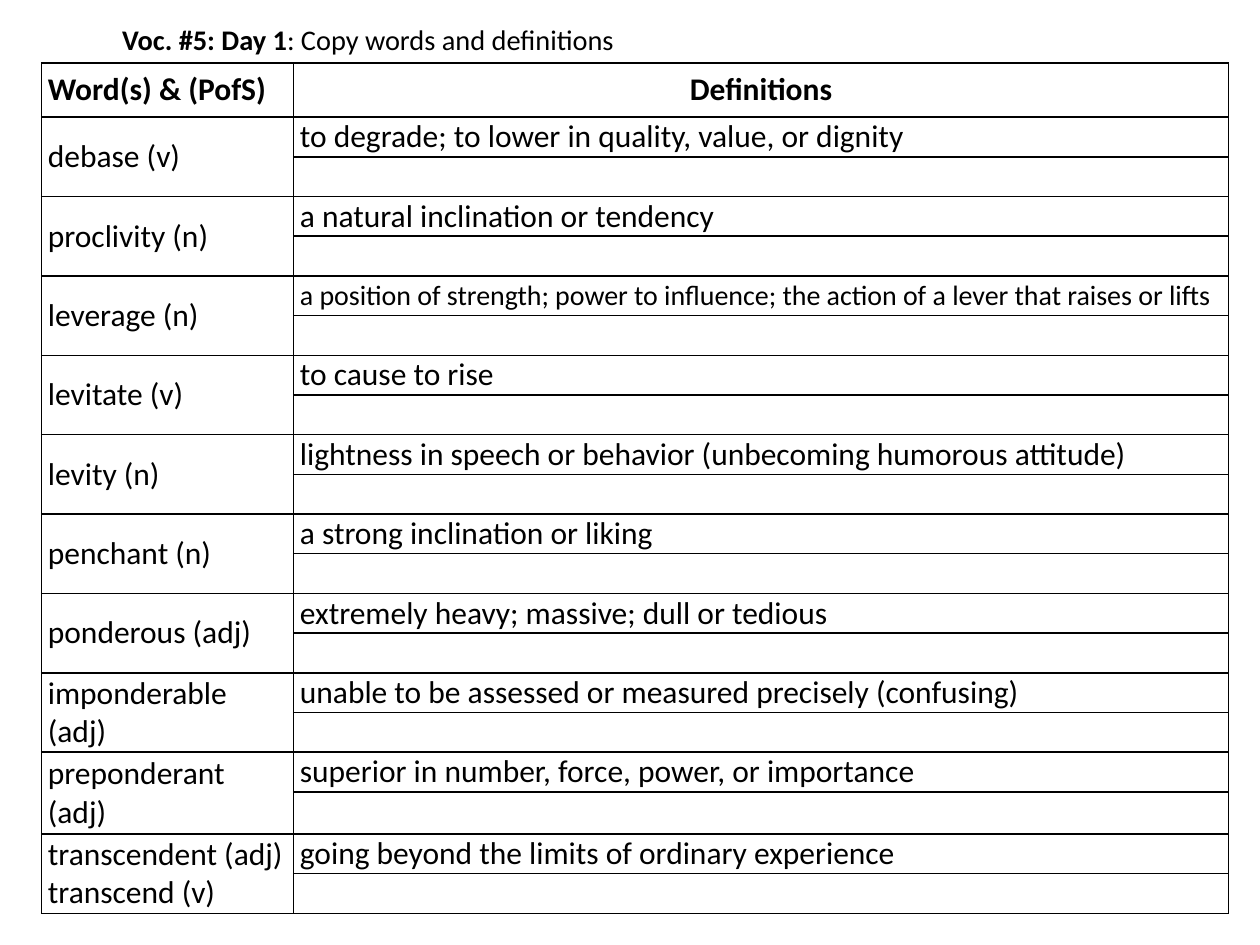
"""Build a vocabulary slide with a table of words and definitions."""
from dataclasses import dataclass

from pptx import Presentation
from pptx.dml.color import RGBColor
from pptx.enum.text import MSO_ANCHOR, PP_ALIGN
from pptx.oxml import parse_xml
from pptx.oxml.ns import nsdecls
from pptx.util import Inches, Pt


@dataclass(frozen=True)
class Theme:
    """Colours, font and type sizes."""
    font: str = "Calibri"
    ink: str = "000000"
    paper: str = "FFFFFF"
    title: float = 16.2
    body: float = 18
    small: float = 16
    border: float = 1


@dataclass(frozen=True)
class Entry:
    """A word, its definition and the look of its two rows."""
    word: str
    definition: str
    size: float = Theme.body
    extra: float = 0


THEME = Theme()
HEADER_H = Inches(0.43)
ENTRY_H = Inches(0.63)
COLUMNS = (Inches(2), Inches(7.42))
ENTRIES = (
    Entry("debase (v)", "to degrade; to lower in quality, value, or dignity"),
    Entry("proclivity (n)", "a natural inclination or tendency"),
    Entry("leverage (n)",
          "a position of strength; power to influence; the action of a lever that raises or lifts",
          size=THEME.small),
    Entry("levitate (v)", "to cause to rise"),
    Entry("levity (n)", "lightness in speech or behavior (unbecoming humorous attitude)"),
    Entry("penchant (n)", "a strong inclination or liking"),
    Entry("ponderous (adj)", "extremely heavy; massive; dull or tedious"),
    Entry("imponderable (adj)", "unable to be assessed or measured precisely (confusing)"),
    Entry("preponderant (adj)", "superior in number, force, power, or importance", extra=0.02),
    Entry("transcendent (adj)\ntranscend (v)", "going beyond the limits of ordinary experience"),
)


def style_paragraph(p, size: float, bold: bool = False, align=PP_ALIGN.LEFT) -> None:
    """Set the font and alignment of a paragraph."""
    p.alignment = align
    p.font.name = THEME.font
    p.font.size = Pt(size)
    p.font.bold = bold
    p.font.color.rgb = RGBColor.from_string(THEME.ink)


def style_cell(cell) -> None:
    """Give a cell its margins, borders and fill."""
    cell.margin_left = cell.margin_right = Inches(0.05)
    cell.margin_top = cell.margin_bottom = 0
    cell.vertical_anchor = MSO_ANCHOR.MIDDLE
    tc_pr = cell._tc.get_or_add_tcPr()
    for side in ("lnL", "lnR", "lnT", "lnB"):
        tc_pr.append(parse_xml(
            f'<a:{side} {nsdecls("a")} w="{Pt(THEME.border)}"><a:solidFill>'
            f'<a:srgbClr val="{THEME.ink}"/></a:solidFill></a:{side}>'))
    cell.fill.solid()
    cell.fill.fore_color.rgb = RGBColor.from_string(THEME.paper)


def write_cell(cell, text: str, size: float = THEME.body, bold: bool = False,
               align=PP_ALIGN.LEFT) -> None:
    """Write styled text into a cell."""
    cell.text = text
    for p in cell.text_frame.paragraphs:
        style_paragraph(p, size, bold, align)


def add_title(s) -> None:
    """Add the heading with its bold lead."""
    sp = s.shapes.add_textbox(Inches(0.67), 0, Inches(4.5), Inches(0.62))
    tf = sp.text_frame
    tf.word_wrap = True
    tf.vertical_anchor = MSO_ANCHOR.MIDDLE
    p = tf.paragraphs[0]
    style_paragraph(p, THEME.title, align=PP_ALIGN.CENTER)
    r = p.add_run()
    r.text = "Voc. #5: Day 1"
    r.font.bold = True
    p.add_run().text = ": Copy words and definitions"


def add_vocabulary(s) -> None:
    """Add the table, two rows to each entry."""
    height = HEADER_H + sum(ENTRY_H + Inches(e.extra) for e in ENTRIES)
    table = s.shapes.add_table(1 + 2 * len(ENTRIES), len(COLUMNS), Inches(0.33), Inches(0.5),
                               sum(COLUMNS), height).table
    table.first_row = table.horz_banding = False
    for column, width in zip(table.columns, COLUMNS):
        column.width = width
    for cell in table.iter_cells():
        style_cell(cell)
    table.rows[0].height = HEADER_H
    write_cell(table.cell(0, 0), "Word(s) & (PofS)", bold=True)
    write_cell(table.cell(0, 1), "Definitions", bold=True, align=PP_ALIGN.CENTER)
    for i, entry in enumerate(ENTRIES):
        top = 1 + 2 * i
        table.rows[top].height = ENTRY_H // 2
        table.rows[top + 1].height = ENTRY_H // 2 + Inches(entry.extra)
        table.cell(top, 0).merge(table.cell(top + 1, 0))
        write_cell(table.cell(top, 0), entry.word)
        write_cell(table.cell(top, 1), entry.definition, entry.size)


def main() -> None:
    """Build and save the slide."""
    prs = Presentation()
    prs.slide_width, prs.slide_height = Inches(10), Inches(7.5)
    s = prs.slides.add_slide(prs.slide_layouts[6])
    add_title(s)
    add_vocabulary(s)
    prs.save("out.pptx")


if __name__ == "__main__":
    main()
